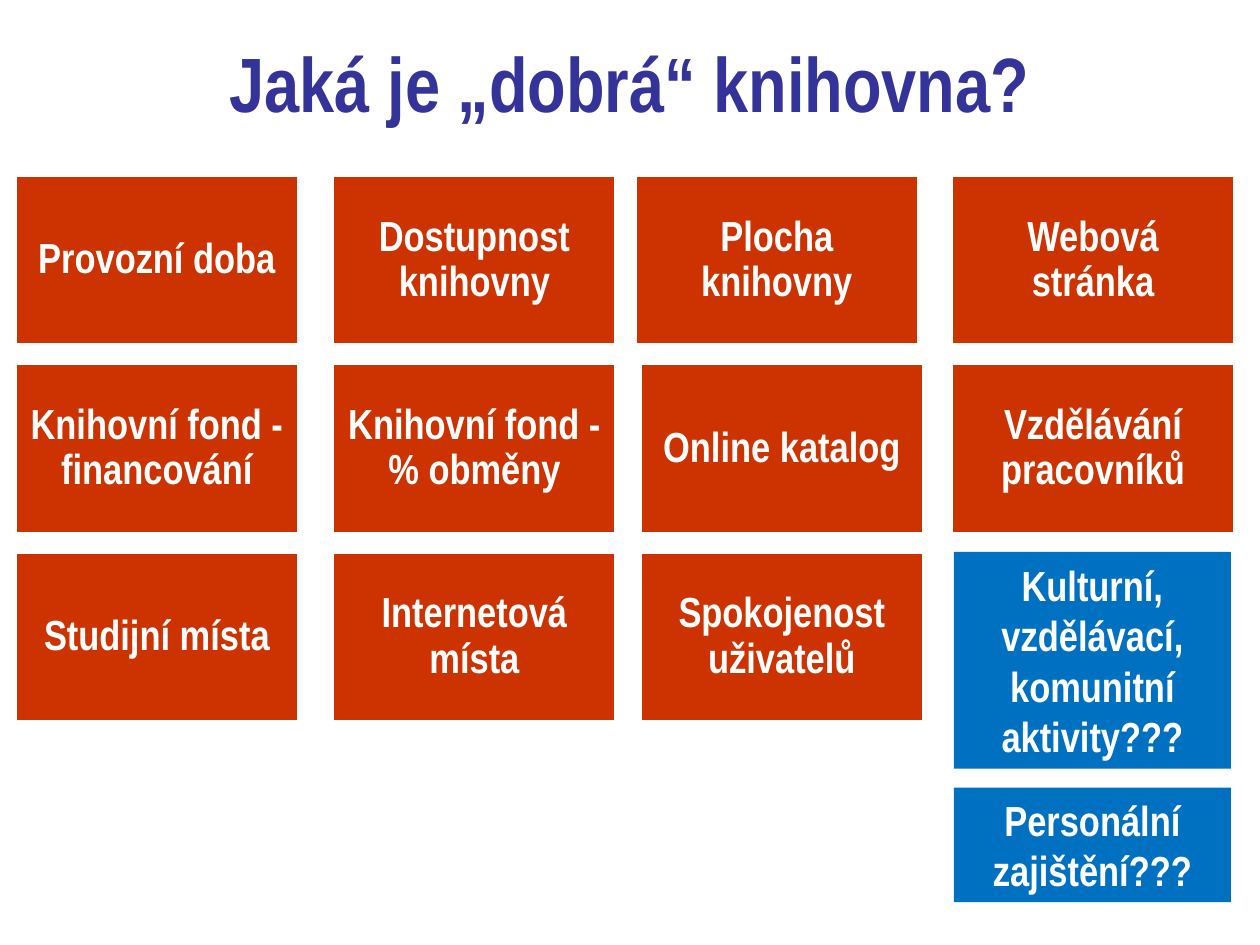
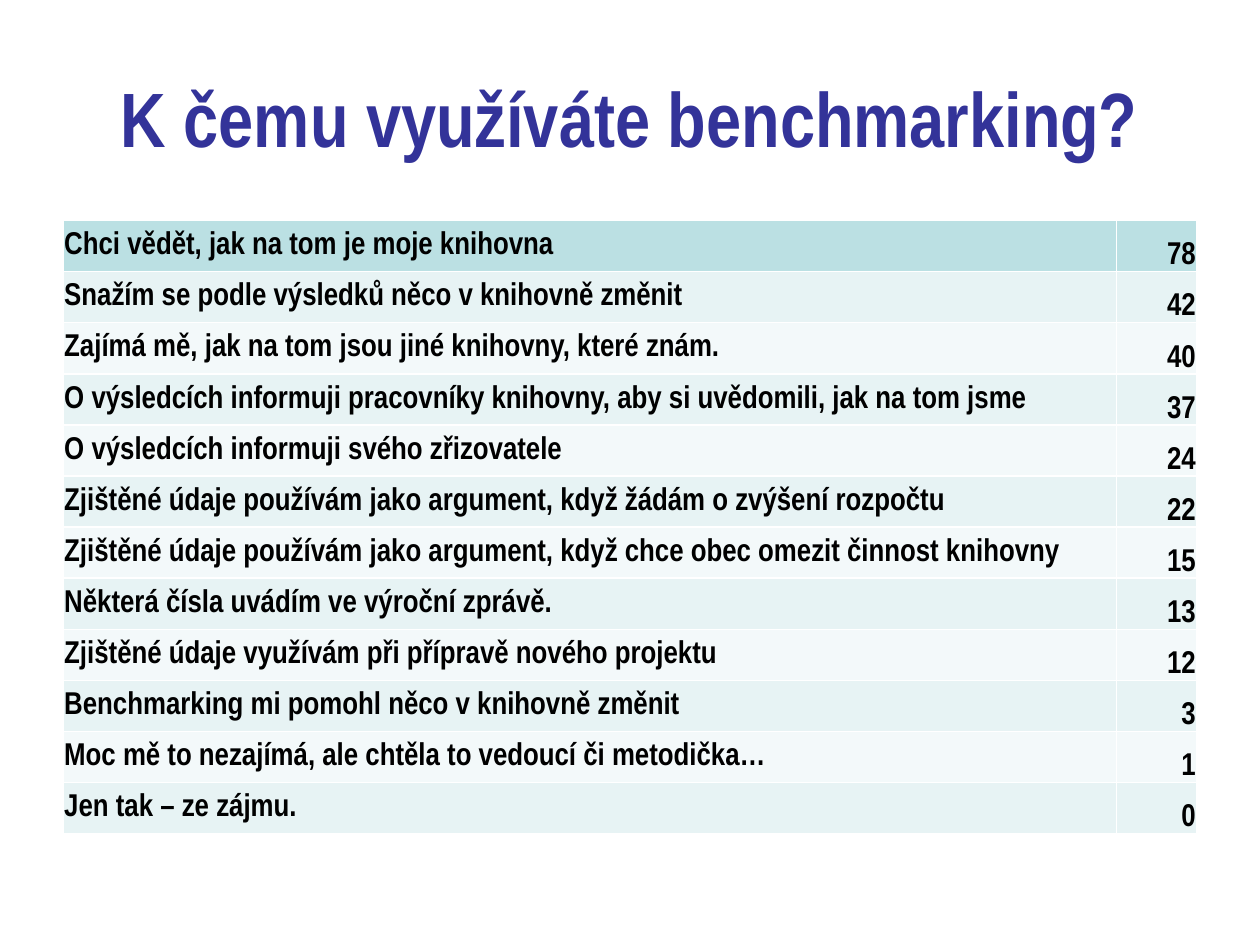
import pptx
import pptx.util
import pptx.dml.color
import pptx.enum.shapes
import pptx.enum.text

Inches = pptx.util.Inches
Pt = pptx.util.Pt
RGBColor = pptx.dml.color.RGBColor
PP_ALIGN = pptx.enum.text.PP_ALIGN
MSO_ANCHOR = pptx.enum.text.MSO_ANCHOR

FONT = "Arial Narrow"
TITLE_BLUE = RGBColor(0x33, 0x33, 0x99)
RED = RGBColor(0xCC, 0x33, 0x00)
BLUE = RGBColor(0x00, 0x70, 0xC0)
WHITE = RGBColor(0xFF, 0xFF, 0xFF)
BLACK = RGBColor(0x00, 0x00, 0x00)
HEADER_FILL = RGBColor(0xBB, 0xE0, 0xE3)
BAND_FILLS = [RGBColor(0xF3, 0xF9, 0xFA), RGBColor(0xE7, 0xF3, 0xF4)]


def write_text(text_frame, text, size, color, alignment):
    text_frame.word_wrap = True
    text_frame.text = text
    for paragraph in text_frame.paragraphs:
        paragraph.alignment = alignment
        paragraph.font.name = FONT
        paragraph.font.size = Pt(size)
        paragraph.font.bold = True
        paragraph.font.color.rgb = color


def add_box(slide, left, top, width, height, fill, text):
    shape = slide.shapes.add_shape(
        pptx.enum.shapes.MSO_SHAPE.RECTANGLE,
        Inches(left), Inches(top), Inches(width), Inches(height))
    shape.shadow.inherit = False
    shape.fill.solid()
    shape.fill.fore_color.rgb = fill
    shape.line.fill.background()
    write_text(shape.text_frame, text, 24, WHITE, PP_ALIGN.CENTER)
    return shape


presentation = pptx.Presentation()
presentation.slide_width = Inches(10)
presentation.slide_height = Inches(7.5)

# Slides with their titles
slides = []
for title, title_height in [("Jaká je „dobrá“ knihovna?", 0.69),
                            ("K čemu využíváte benchmarking?", 1.25)]:
    slide = presentation.slides.add_slide(presentation.slide_layouts[6])
    title_box = slide.shapes.add_textbox(
        Inches(0.5), Inches(0.3), Inches(9), Inches(title_height))
    title_box.text_frame.vertical_anchor = MSO_ANCHOR.MIDDLE
    write_text(title_box.text_frame, title, 44, TITLE_BLUE, PP_ALIGN.CENTER)
    slides.append(slide)
criteria_slide, usage_slide = slides

# Criteria of a good library: red grid, third column slightly offset below row one
criteria = [
    ["Provozní doba", "Dostupnost knihovny", "Plocha knihovny", "Webová stránka"],
    ["Knihovní fond - financování", "Knihovní fond - % obměny",
     "Online katalog", "Vzdělávání pracovníků"],
    ["Studijní místa", "Internetová místa", "Spokojenost uživatelů"],
]
for row, labels in enumerate(criteria):
    column_lefts = [0.12, 2.64, 5.04 if row == 0 else 5.08, 7.55]
    for left, label in zip(column_lefts, labels):
        box = add_box(criteria_slide, left, 1.39 + row * 1.495, 2.25, 1.35, RED, label)
        box.line.color.rgb = WHITE
        box.line.width = Pt(2)
        box.text_frame.paragraphs[0].line_spacing = 0.9

# Open questions in blue
add_box(criteria_slide, 7.57, 4.38, 2.2, 1.72, BLUE,
        "Kulturní,\nvzdělávací,\nkomunitní\naktivity???")
add_box(criteria_slide, 7.57, 6.25, 2.2, 0.91, BLUE, "Personální zajištění???")

# Table of benchmarking uses
uses = [
    ("Chci vědět, jak na tom je moje knihovna", 78),
    ("Snažím se podle výsledků něco v knihovně změnit", 42),
    ("Zajímá mě, jak na tom jsou jiné knihovny, které znám.", 40),
    ("O výsledcích informuji pracovníky knihovny, aby si uvědomili, jak na tom jsme", 37),
    ("O výsledcích informuji svého zřizovatele", 24),
    ("Zjištěné údaje používám jako argument, když žádám o zvýšení rozpočtu", 22),
    ("Zjištěné údaje používám jako argument, když chce obec omezit činnost knihovny", 15),
    ("Některá čísla uvádím ve výroční zprávě.", 13),
    ("Zjištěné údaje využívám při přípravě nového projektu", 12),
    ("Benchmarking mi pomohl něco v knihovně změnit", 3),
    ("Moc mě to nezajímá, ale chtěla to vedoucí či metodička…", 1),
    ("Jen tak – ze zájmu.", 0),
]
table = usage_slide.shapes.add_table(
    len(uses), 2, Inches(0.5), Inches(1.75), Inches(9), Inches(4.87)).table
table.columns[0].width = Inches(8.36)
table.columns[1].width = Inches(0.64)
cell_styles = [(PP_ALIGN.LEFT, MSO_ANCHOR.MIDDLE), (PP_ALIGN.RIGHT, MSO_ANCHOR.BOTTOM)]
for row, use in enumerate(uses):
    for column, (alignment, anchor) in enumerate(cell_styles):
        cell = table.cell(row, column)
        cell.fill.solid()
        cell.fill.fore_color.rgb = HEADER_FILL if row == 0 else BAND_FILLS[row % 2]
        cell.margin_left = cell.margin_right = cell.margin_top = Inches(0.01)
        cell.margin_bottom = 0
        cell.vertical_anchor = anchor
        write_text(cell.text_frame, str(use[column]), 18, BLACK, alignment)

presentation.save("out.pptx")
